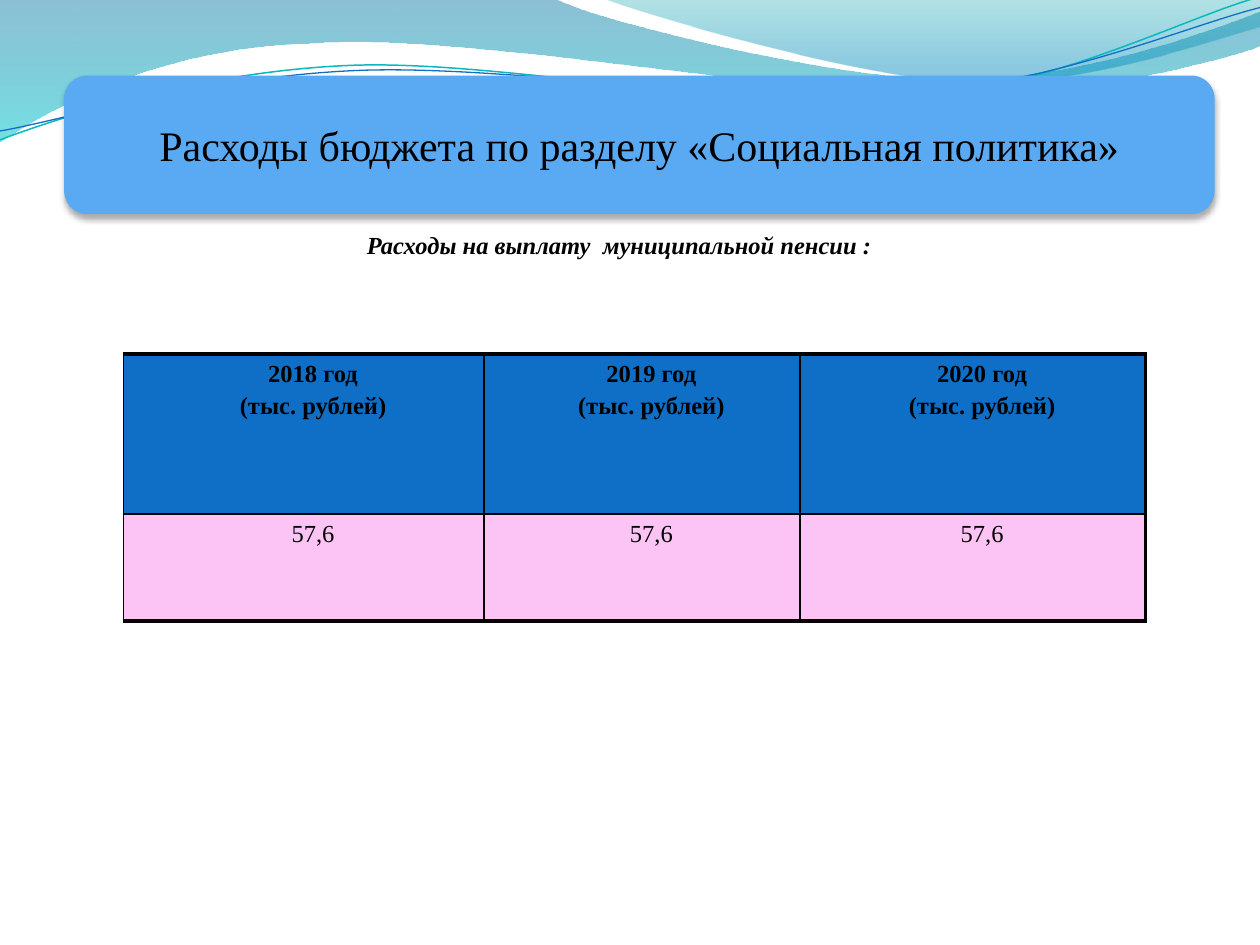
from lxml import etree
from pptx import Presentation
from pptx.dml.color import RGBColor
from pptx.enum.shapes import MSO_SHAPE
from pptx.enum.text import MSO_ANCHOR, PP_ALIGN
from pptx.oxml import parse_xml
from pptx.oxml.ns import nsdecls, qn
from pptx.util import Inches, Pt

CENTER, MIDDLE = PP_ALIGN.CENTER, MSO_ANCHOR.MIDDLE
ROUNDED = MSO_SHAPE.ROUNDED_RECTANGLE
TITLE_ONLY = 5
FONT = "Times New Roman"
BLACK = RGBColor(0x00, 0x00, 0x00)
TITLE_BLUE = RGBColor(0x59, 0xAA, 0xF2)
BLUE = RGBColor(0x0F, 0x6F, 0xC6)
PINK = RGBColor(0xFC, 0xC4, 0xF4)
TEAL = RGBColor(0x0A, 0xB8, 0xBF)
DEEP_BLUE = RGBColor(0x00, 0x74, 0xA1)
TURQUOISE = RGBColor(0x00, 0xC6, 0xCF)
SEA_GREEN = RGBColor(0x00, 0xA1, 0xA9)
SKY_BLUE = RGBColor(0x00, 0x8B, 0xBF)
THIN, THICK = 1, 2.25

# Each wave segment holds one end point, or two control points and an end point.
WAVES = [
    ((0, 0), [
        (4.4, -0.01), (4.76, 0.17, 6.64, 0.63, 7.58, 0.63),
        (8.53, 0.63, 9.58, 0.26, 10, 0.09), (10.01, 0.36),
        (9.83, 0.44, 8.7, 0.76, 7.46, 0.75), (6.22, 0.75, 3.82, 0.28, 2.57, 0.34),
        (1.29, 0.36, 0.46, 0.83, -0.01, 1.13)],
     [(0, DEEP_BLUE, 45), (1, TURQUOISE, 55)]),
    ((4.79, -0.01), [
        (5.09, 0.11, 6.82, 0.62, 7.69, 0.65), (8.56, 0.69, 9.61, 0.32, 10, 0.21),
        (10, 0)],
     [(0, SEA_GREEN, 30), (0.8, SKY_BLUE, 45)]),
]
WAVE_LINES = [
    ((0, 1.11), [
        (0.48, 0.93, 1.58, 0.57, 2.77, 0.52), (3.95, 0.47, 5.93, 0.89, 7.13, 0.8),
        (8.33, 0.71, 9.38, 0.15, 9.98, -0.02)], TEAL, 0.85),
    ((0, 1.04), [
        (0.47, 0.96, 1.64, 0.61, 2.83, 0.56), (4.03, 0.51, 5.97, 0.84, 7.17, 0.75),
        (8.36, 0.67, 9.41, 0.21, 10, 0.06)], BLUE, 0.75),
]
COLUMN_WIDTHS = [2.86, 2.51, 2.74]
ROW_HEIGHTS = [1.27, 0.85]
ROWS = [
    [f"{year} год\n(тыс. рублей)" for year in (2018, 2019, 2020)],
    ["57,6"] * 3,
]


def format_text(text_frame, size, bold=False, italic=False):
    for paragraph in text_frame.paragraphs:
        paragraph.alignment = CENTER
        for run in paragraph.runs:
            font = run.font
            font.name, font.size, font.color.rgb = FONT, Pt(size), BLACK
            font.bold, font.italic = bold, italic


def add_curve(slide, start, segments, close):
    """Build a freeform through the end points, then bend its cubic segments."""
    builder = slide.shapes.build_freeform(*map(Inches, start))
    builder.add_line_segments(
        [tuple(map(Inches, segment[-2:])) for segment in segments], close=close)
    shape = builder.convert_to_shape()
    shape.shadow.inherit = False
    lines = list(shape._element.iter(qn("a:lnTo")))
    for line, segment in zip(lines, segments):
        if len(segment) == 2:
            continue
        line.tag = qn("a:cubicBezTo")
        controls = zip(segment[0:4:2], segment[1:4:2])
        for index, (x, y) in enumerate(controls):
            point = etree.Element(qn("a:pt"), x=str(Inches(x) - shape.left),
                                  y=str(Inches(y) - shape.top))
            line.insert(index, point)
    return shape


def add_waves(slide):
    for start, segments, stops in WAVES:
        wave = add_curve(slide, start, segments, True)
        wave.line.fill.background()
        wave.fill.gradient()
        wave.fill.gradient_angle = 270
        for stop, (position, color, _) in zip(wave.fill.gradient_stops, stops):
            stop.position = position
            stop.color.rgb = color
        colors = wave._element.spPr.iter(qn("a:srgbClr"))
        for element, (_, _, opacity) in zip(colors, stops):
            etree.SubElement(element, qn("a:alpha"), val=str(opacity * 1000))
    for start, segments, color, width in WAVE_LINES:
        curve = add_curve(slide, start, segments, False)
        curve.fill.background()
        curve.line.color.rgb = color
        curve.line.width = Pt(width)


def add_title(slide, box, text):
    """Lay the title over a rounded, shadowed banner."""
    banner = slide.shapes.add_shape(ROUNDED, *map(Inches, box))
    banner.fill.solid()
    banner.fill.fore_color.rgb = TITLE_BLUE
    banner.line.fill.background()
    banner._element.spPr.append(parse_xml(
        f'<a:effectLst {nsdecls("a")}><a:outerShdw blurRad="{Pt(3.5)}" dist="{Pt(2.2)}" '
        f'dir="5400000" rotWithShape="0"><a:srgbClr val="{BLACK}"><a:alpha val="32000"/>'
        '</a:srgbClr></a:outerShdw></a:effectLst>'))
    title = slide.shapes.title
    title.left, title.top, title.width, title.height = map(Inches, box)
    title.text_frame.text = text
    title.text_frame.vertical_anchor = MIDDLE
    format_text(title.text_frame, 24)
    slide.shapes._spTree.append(title._element)  # in front of the banner


def add_subtitle(slide, box, text):
    text_box = slide.shapes.add_textbox(*map(Inches, box))
    text_box.text_frame.word_wrap = True
    text_box.text_frame.text = text
    format_text(text_box.text_frame, 14, bold=True, italic=True)


def set_borders(cell, widths):
    """Draw the left, right, top and bottom borders, with widths in points."""
    properties = cell._tc.get_or_add_tcPr()
    for index, (side, width) in enumerate(zip("LRTB", widths)):
        properties.insert(index, parse_xml(
            f'<a:ln{side} {nsdecls("a")} w="{Pt(width)}"><a:solidFill>'
            f'<a:srgbClr val="{BLACK}"/></a:solidFill></a:ln{side}>'))


def add_expense_table(slide, left, top):
    row_count, column_count = len(ROWS), len(COLUMN_WIDTHS)
    size = sum(COLUMN_WIDTHS), sum(ROW_HEIGHTS)
    table = slide.shapes.add_table(
        row_count, column_count, *map(Inches, (left, top, *size))).table
    table.first_row = table.horz_banding = False
    for column, width in zip(table.columns, COLUMN_WIDTHS):
        column.width = Inches(width)
    for row, height in zip(table.rows, ROW_HEIGHTS):
        row.height = Inches(height)
    for i, texts in enumerate(ROWS):
        for j, text in enumerate(texts):
            cell = table.cell(i, j)
            cell.text_frame.text = text
            format_text(cell.text_frame, 14, bold=i == 0)
            for paragraph in cell.text_frame.paragraphs:
                paragraph.space_before = Pt(2.8)
                paragraph._p.get_or_add_pPr().set("marL", str(Inches(0.15)))
            cell.fill.solid()
            cell.fill.fore_color.rgb = BLUE if i == 0 else PINK
            set_borders(cell, (THIN,
                               THICK if j == column_count - 1 else THIN,
                               THICK if i == 0 else THIN,
                               THICK if i == row_count - 1 else THIN))


def main():
    presentation = Presentation()
    presentation.slide_width, presentation.slide_height = Inches(10), Inches(7.5)
    slide = presentation.slides.add_slide(presentation.slide_layouts[TITLE_ONLY])
    add_waves(slide)
    add_title(slide, (0.51, 0.6, 9.13, 1.1),
              "Расходы бюджета по разделу «Социальная политика»")
    add_subtitle(slide, (0.27, 1.78, 9.29, 0.34),
                 "Расходы на выплату  муниципальной пенсии :")
    add_expense_table(slide, 0.98, 2.81)
    presentation.save("out.pptx")


if __name__ == "__main__":
    main()
